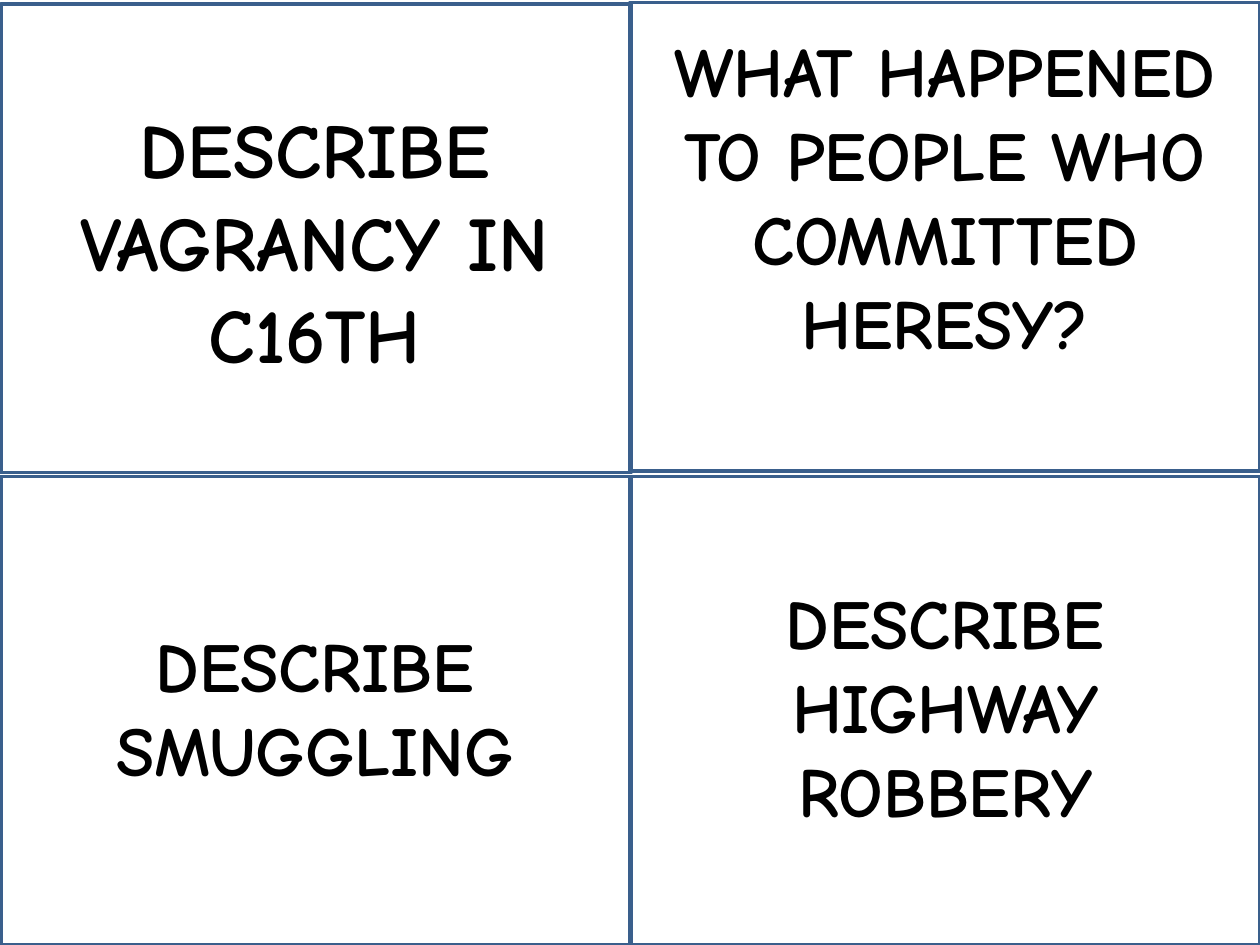
from pptx import Presentation
from pptx.dml.color import RGBColor
from pptx.enum.shapes import MSO_SHAPE
from pptx.enum.text import MSO_ANCHOR, MSO_AUTO_SIZE, PP_ALIGN
from pptx.util import Inches, Pt

RECT = MSO_SHAPE.RECTANGLE
TOP = MSO_ANCHOR.TOP
GROW = MSO_AUTO_SIZE.SHAPE_TO_FIT_TEXT
CENTER = PP_ALIGN.CENTER
FONT = "Comic Neue"
WIDE, HIGH = 5, 3.72
CARDS = [
    (5, 0.02, "WHAT HAPPENED TO PEOPLE WHO COMMITTED HERESY?", 40, 0.15, 3.47),
    (5, 3.78, "DESCRIBE HIGHWAY ROBBERY", 40, 0.77, 2.12),
    (0.01, 0.03, "DESCRIBE VAGRANCY IN C16TH", 44, 0.73, 2.32),
    (0.01, 3.78, "DESCRIBE SMUGGLING", 40, 1.11, 1.45),
]


def color(code):
    """Turn a hex string into a colour."""
    return RGBColor.from_string(code)


def add_frame(slide, left, top):
    """Draw the outline of one card."""
    frame = slide.shapes.add_shape(
        RECT, Inches(left), Inches(top), Inches(WIDE), Inches(HIGH))
    frame.shadow.inherit = False
    frame.fill.background()
    frame.line.color.rgb = color("3A5F8C")
    frame.line.width = Pt(2)


def add_task(slide, left, top, words, size, drop, tall):
    """Write the task of one card, a given drop below its top edge."""
    box = slide.shapes.add_textbox(
        Inches(int(left)), Inches(top + drop), Inches(WIDE), Inches(tall))
    frame = box.text_frame
    frame.word_wrap = True
    frame.auto_size = GROW
    frame.vertical_anchor = TOP
    para = frame.paragraphs[0]
    para.alignment = CENTER
    run = para.add_run()
    run.text = words
    run.font.name = FONT
    run.font.size = Pt(size)
    run.font.bold = True
    run.font.color.rgb = color("000000")


def main():
    """Build the slide of four task cards."""
    deck = Presentation()
    deck.slide_width, deck.slide_height = Inches(10), Inches(7.5)
    slide = deck.slides.add_slide(deck.slide_layouts[6])
    for left, top, *task in CARDS:
        add_frame(slide, left, top)
        add_task(slide, left, top, *task)
    deck.save("out.pptx")


if __name__ == "__main__":
    main()
